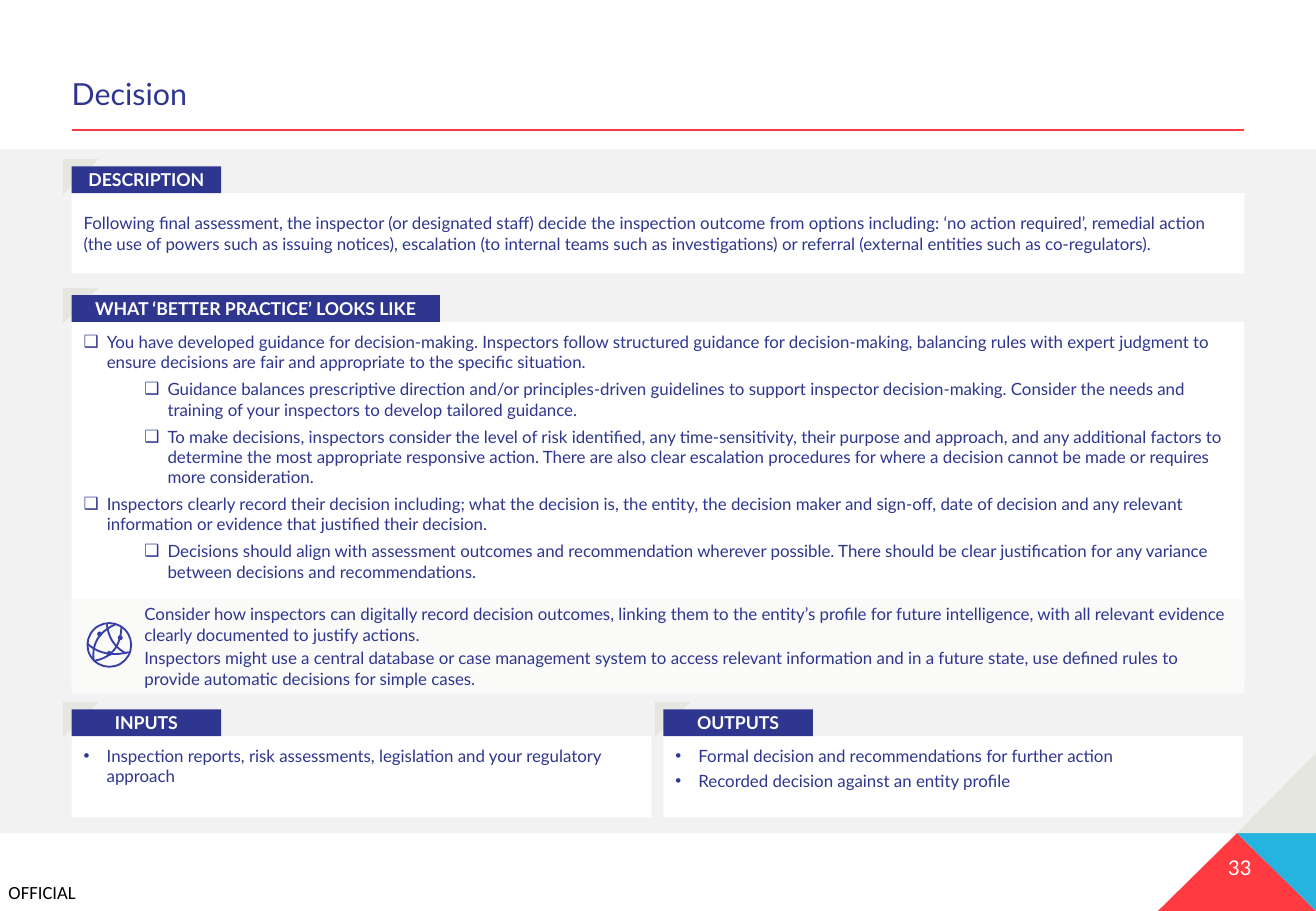
from dataclasses import dataclass

from lxml.etree import SubElement
from pptx import Presentation
from pptx.dml.color import RGBColor
from pptx.enum.shapes import MSO_CONNECTOR, MSO_SHAPE
from pptx.enum.text import MSO_ANCHOR, PP_ALIGN
from pptx.oxml.ns import qn
from pptx.util import Inches, Pt


@dataclass(frozen=True)
class Theme:
    navy: str = "2E368F"
    icon: str = "363FA7"
    red: str = "FF3A40"
    cyan: str = "25B3E0"
    stone: str = "E6E6E1"
    band: str = "F2F2F2"
    tip: str = "FAFAF9"
    white: str = "FFFFFF"
    black: str = "000000"
    font: str = "Lato"
    marking_font: str = "Calibri"
    title_size: float = 18
    page_size: float = 12
    marking_size: float = 11
    heading_size: float = 10.5
    body_size: float = 10


@dataclass(frozen=True)
class Item:
    text: str
    bullet: str = ""
    margin: float = 0
    before: float = 0
    after: float = 0


@dataclass(frozen=True)
class Panel:
    left: float
    top: float
    width: float
    height: float
    items: list[Item]
    heading: str = ""
    heading_width: float = 1.23
    fill: str = Theme.white
    inset: float = 0.08
    anchor: MSO_ANCHOR = MSO_ANCHOR.TOP


THEME = Theme()
SLIDE_W, SLIDE_H = 10.83, 7.5
LEFT, WIDTH = 0.59, 9.65
HALF, RIGHT_HALF = 4.77, 5.46
HANGING = 0.19
HEADING_H = 0.22
CORNER, CORNER_SHIFT = 0.29, 0.07


def check(text: str, level: int = 0) -> Item:
    return Item(text, "❑", HANGING + 0.5 * level, before=4)


def dot(text: str) -> Item:
    return Item(text, "•", HANGING, after=3)


PANELS = [
    Panel(LEFT, 1.59, WIDTH, 0.66, [
        Item("Following final assessment, the inspector (or designated staff) decide the inspection outcome from options including: ‘no action required’, remedial action (the use of powers such as issuing notices), escalation (to internal teams such as investigations) or referral (external entities such as co-regulators).", after=3),
    ], "DESCRIPTION", inset=0.05, anchor=MSO_ANCHOR.MIDDLE),
    Panel(LEFT, 2.65, WIDTH, 2.99, [
        check("You have developed guidance for decision-making. Inspectors follow structured guidance for decision-making, balancing rules with expert judgment to ensure decisions are fair and appropriate to the specific situation."),
        check("Guidance balances prescriptive direction and/or principles-driven guidelines to support inspector decision-making. Consider the needs and training of your inspectors to develop tailored guidance.", 1),
        check("To make decisions, inspectors consider the level of risk identified, any time-sensitivity, their purpose and approach, and any additional factors to determine the most appropriate responsive action. There are also clear escalation procedures for where a decision cannot be made or requires more consideration.", 1),
        check("Inspectors clearly record their decision including; what the decision is, the entity, the decision maker and sign-off, date of decision and any relevant information or evidence that justified their decision."),
        check("Decisions should align with assessment outcomes and recommendation wherever possible. There should be clear justification for any variance between decisions and recommendations.", 1),
    ], "WHAT ‘BETTER PRACTICE’ LOOKS LIKE", 3.03),
    Panel(LEFT, 4.93, WIDTH, 0.78, [
        Item("Consider how inspectors can digitally record decision outcomes, linking them to the entity’s profile for future intelligence, with all relevant evidence clearly documented to justify actions.", margin=0.5, after=2),
        Item("Inspectors might use a central database or case management system to access relevant information and in a future state, use defined rules to provide automatic decisions for simple cases.", margin=0.5, after=2),
    ], fill=THEME.tip, anchor=MSO_ANCHOR.MIDDLE),
    Panel(LEFT, 6.06, HALF, 0.67, [
        dot("Inspection reports, risk assessments, legislation and your regulatory approach"),
    ], "INPUTS"),
    Panel(RIGHT_HALF, 6.06, HALF, 0.67, [
        dot("Formal decision and recommendations for further action"),
        dot("Recorded decision against an entity profile"),
    ], "OUTPUTS"),
]

# Corner triangles: fill and points
APEX = (10.18, 6.86)
TRIANGLES = [
    (THEME.red, [APEX, (9.53, SLIDE_H), (SLIDE_W, SLIDE_H)]),
    (THEME.cyan, [(SLIDE_W, APEX[1]), APEX, (SLIDE_W, SLIDE_H)]),
    (THEME.stone, [(SLIDE_W, 6.2), APEX, (SLIDE_W, APEX[1])]),
]

# Globe: start, control and end of each arc, then the nodes
GLOBE = (0.9, 5.31)
GLOBE_RADIUS, NODE_RADIUS = 0.18, 0.02
ARCS = [
    ((0.88, 5.14), (0.9, 5.31), (1.04, 5.38)),
    ((0.95, 5.14), (0.75, 5.23), (0.77, 5.43)),
    ((0.72, 5.3), (0.85, 5.42), (1.06, 5.37)),
    ((1.0, 5.16), (0.99, 5.4), (0.78, 5.44)),
]
NODES = [(0.82, 5.22), (0.99, 5.25), (0.9, 5.38)]


def rgb(color: str) -> RGBColor:
    return RGBColor.from_string(color)


def paint(shape, fill: str = "", line: str = "", weight: float = 1.1) -> None:
    shape.shadow.inherit = False
    if fill:
        shape.fill.solid()
        shape.fill.fore_color.rgb = rgb(fill)
    else:
        shape.fill.background()
    if line:
        shape.line.color.rgb = rgb(line)
        shape.line.width = Pt(weight)
    else:
        shape.line.fill.background()


def add_block(slide, kind, left: float, top: float, width: float, height: float, fill: str = "", line: str = ""):
    block = slide.shapes.add_shape(kind, Inches(left), Inches(top), Inches(width), Inches(height))
    paint(block, fill, line)
    return block


def add_disc(slide, center: tuple[float, float], radius: float, fill: str = "", line: str = "") -> None:
    add_block(slide, MSO_SHAPE.OVAL, center[0] - radius, center[1] - radius, 2 * radius, 2 * radius, fill, line)


def add_outline(slide, points: list[tuple[float, float]], closed: bool, fill: str = "", line: str = "") -> None:
    start, *rest = [(Inches(x), Inches(y)) for x, y in points]
    builder = slide.shapes.build_freeform(*start)
    builder.add_line_segments(rest, close=closed)
    paint(builder.convert_to_shape(), fill, line)


def write(frame, items: list[Item], size: float, color: str, font: str = THEME.font, bold: bool = False,
          align=PP_ALIGN.LEFT, anchor=MSO_ANCHOR.TOP, inset_x: float = 0.1, inset_y: float = 0.05) -> None:
    frame.word_wrap = True
    frame.vertical_anchor = anchor
    frame.margin_left = frame.margin_right = Inches(inset_x)
    frame.margin_top = frame.margin_bottom = Inches(inset_y)
    for index, item in enumerate(items):
        paragraph = frame.add_paragraph() if index else frame.paragraphs[0]
        paragraph.text = item.text
        paragraph.alignment = align
        paragraph.space_before = Pt(item.before if index else 0)
        paragraph.space_after = Pt(item.after)
        properties = paragraph._p.get_or_add_pPr()
        properties.set("marL", str(Inches(item.margin)))
        properties.set("indent", str(Inches(-HANGING if item.bullet else 0)))
        if item.bullet:
            SubElement(properties, qn("a:buFont"), typeface="Arial")
            SubElement(properties, qn("a:buChar"), char=item.bullet)
        for run in paragraph.runs:
            run.font.name, run.font.size, run.font.bold = font, Pt(size), bold
            run.font.color.rgb = rgb(color)


def add_label(slide, text: str, left: float, top: float, width: float, height: float, size: float, color: str, **style):
    label = slide.shapes.add_textbox(Inches(left), Inches(top), Inches(width), Inches(height))
    write(label.text_frame, [Item(text)], size, color, inset_x=0, **style)
    return label


def add_panel(slide, panel: Panel) -> None:
    body = add_block(slide, MSO_SHAPE.RECTANGLE, panel.left, panel.top, panel.width, panel.height, panel.fill)
    write(body.text_frame, panel.items, THEME.body_size, THEME.navy, anchor=panel.anchor, inset_y=panel.inset)
    if panel.heading:
        top = panel.top - HEADING_H
        corner = add_block(slide, MSO_SHAPE.HALF_FRAME, panel.left - CORNER_SHIFT, top - CORNER_SHIFT + 0.01,
                           CORNER, CORNER, THEME.stone)
        corner.adjustments[0] = corner.adjustments[1] = 0.24
        heading = add_block(slide, MSO_SHAPE.RECTANGLE, panel.left, top, panel.heading_width, HEADING_H, THEME.navy)
        write(heading.text_frame, [Item(panel.heading)], THEME.heading_size, THEME.white, bold=True,
              align=PP_ALIGN.CENTER, anchor=MSO_ANCHOR.MIDDLE)


def add_globe(slide) -> None:
    add_disc(slide, GLOBE, GLOBE_RADIUS, line=THEME.icon)
    steps = [step / 10 for step in range(11)]
    for start, control, end in ARCS:
        curve = [tuple((1 - t) ** 2 * a + 2 * t * (1 - t) * b + t * t * c for a, b, c in zip(start, control, end))
                 for t in steps]
        add_outline(slide, curve, False, line=THEME.icon)
    for node in NODES:
        add_disc(slide, node, NODE_RADIUS, fill=THEME.icon)


def main() -> None:
    deck = Presentation()
    deck.slide_width, deck.slide_height = Inches(SLIDE_W), Inches(SLIDE_H)
    slide = deck.slides.add_slide(deck.slide_layouts[6])

    # Background band, corner triangles and footer
    add_block(slide, MSO_SHAPE.RECTANGLE, 0, 1.23, SLIDE_W, 5.63, THEME.band)
    for fill, points in TRIANGLES:
        add_outline(slide, points, True, fill)
    add_label(slide, "OFFICIAL", 0.07, 7.25, 0.7, 0.18, THEME.marking_size, THEME.black,
              font=THEME.marking_font, inset_y=0)
    add_label(slide, "33", 9.43, 6.99, 0.87, 0.3, THEME.page_size, THEME.white, align=PP_ALIGN.RIGHT)

    # Title and rule
    title = add_label(slide, "Decision", LEFT, 0.59, WIDTH, 0.38, THEME.title_size, THEME.navy, anchor=MSO_ANCHOR.BOTTOM)
    title.text_frame.paragraphs[0].line_spacing = 0.9
    rule = slide.shapes.add_connector(MSO_CONNECTOR.STRAIGHT, Inches(LEFT), Inches(1.07), Inches(LEFT + WIDTH), Inches(1.07))
    rule.line.color.rgb = rgb(THEME.red)
    rule.line.width = Pt(1.25)
    SubElement(rule._element.spPr, qn("a:effectLst"))

    # Panels and globe icon
    for panel in PANELS:
        add_panel(slide, panel)
    add_globe(slide)

    deck.save("out.pptx")


if __name__ == "__main__":
    main()
